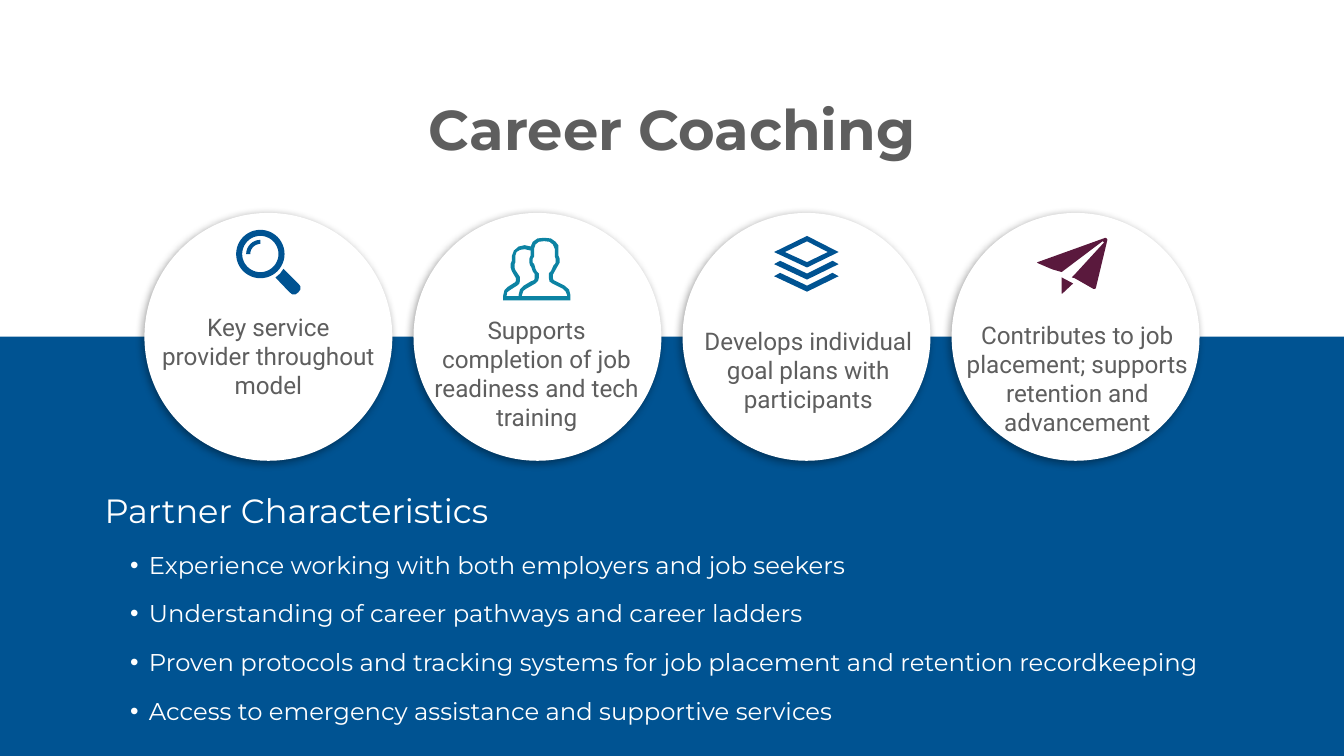
from dataclasses import dataclass
from math import cos, radians, sin

from lxml import etree
from pptx import Presentation
from pptx.dml.color import RGBColor
from pptx.enum.shapes import MSO_SHAPE
from pptx.enum.text import MSO_ANCHOR, MSO_AUTO_SIZE, PP_ALIGN
from pptx.oxml.ns import qn
from pptx.util import Cm, Pt

CENTER, LEFT = PP_ALIGN.CENTER, PP_ALIGN.LEFT
TOP, MIDDLE = MSO_ANCHOR.TOP, MSO_ANCHOR.MIDDLE
NO_AUTOFIT = MSO_AUTO_SIZE.NONE
RECTANGLE, OVAL = MSO_SHAPE.RECTANGLE, MSO_SHAPE.OVAL

SLIDE_WIDTH, SLIDE_HEIGHT = 50.8, 28.58
BAND_TOP = 12.73
CIRCLE_SIZE, CIRCLE_PITCH, CIRCLE_TOP = 9.37, 10.17, 8.05
ICON_UNITS_PER_CM = 39.37


@dataclass(frozen=True)
class Theme:
    white: str = "FFFFFF"
    blue: str = "005392"
    teal: str = "0C83A3"
    plum: str = "5A193D"
    gray: str = "5E5E5E"
    shadow: str = "000000"
    heading_font: str = "Montserrat"
    text_font: str = "Roboto"
    title_size: int = 60
    subtitle_size: int = 36
    text_size: int = 26


def arc(center, radius, start=0, end=360, steps=48):
    """Points along an arc, with angles in degrees clockwise from the right."""
    angles = [radians(start + (end - start) * i / steps) for i in range(steps + 1)]
    return [(center[0] + radius * cos(a), center[1] + radius * sin(a)) for a in angles]


def magnifier():
    center = (35.5, 36)
    handle = [(92, 80), (70, 58), (65, 65), (58, 71), (79, 93), (83, 96),
              (88, 96), (92, 93), (95, 89), (95, 84)]
    glint = arc(center, 21, 180, 270) + arc(center, 15, 270, 180)
    return [arc(center, 36), arc(center, 27), glint, handle]


def people():
    outline = [
        (91, 71), (75, 63), (74, 60), (74, 55), (75, 53), (80, 44), (84, 37),
        (84, 31), (82, 26), (82, 11), (78, 6), (71, 1), (61, 0), (51, 1),
        (44, 6), (41, 13), (32, 11), (23, 13), (16, 19), (13, 27), (13, 34),
        (11, 39), (11, 44), (13, 50), (19, 60), (19, 64), (18, 66), (7, 73),
        (2, 78), (0, 86), (0, 93), (100, 93), (100, 85), (98, 77)]
    back_person = [
        (25, 64), (25, 58), (24, 57), (18, 48), (17, 45), (17, 39), (18, 37),
        (18, 27), (20, 21), (25, 18), (32, 17), (41, 19), (41, 26), (39, 31),
        (39, 37), (40, 41), (42, 44), (44, 50), (47, 54), (47, 60), (46, 63),
        (41, 65), (31, 71), (25, 77), (23, 85), (23, 87), (5, 87), (6, 81),
        (10, 78), (21, 71), (24, 68)]
    front_person = [
        (46, 16), (48, 10), (53, 6), (61, 5), (69, 6), (74, 10), (77, 17),
        (77, 28), (78, 31), (78, 37), (77, 39), (75, 41), (71, 50), (68, 53),
        (68, 60), (69, 65), (73, 68), (89, 76), (93, 80), (95, 85), (95, 87),
        (28, 87), (28, 85), (30, 79), (34, 76), (48, 68), (52, 64), (53, 60),
        (53, 53), (50, 50), (48, 46), (47, 42), (46, 39), (44, 37), (44, 31),
        (46, 28)]
    return [outline, back_person, front_person]


def layers():
    chevron = [(87, 37), (96, 42), (49, 65), (0, 42), (9, 37), (49, 56)]
    return [[(96, 24), (49, 0), (0, 24), (49, 47)],
            [(49, 8), (80, 24), (49, 39), (16, 24)],
            chevron,
            [(x, y + 18) for x, y in chevron]]


def paper_plane():
    wings = [(102, 0), (2, 36), (0, 37), (2, 38), (23, 47), (37, 51), (98, 5),
             (100, 7), (56, 55), (52, 59), (56, 60), (84, 76), (87, 76),
             (88, 74), (105, 3), (104, 1)]
    return [wings, [(37, 59), (37, 83), (38, 83), (54, 68)]]


class SlideBuilder:
    def __init__(self, slide, theme):
        self.slide, self.theme = slide, theme

    def paint(self, shape, color):
        shape.shadow.inherit = False
        shape.fill.solid()
        shape.fill.fore_color.rgb = RGBColor.from_string(color)
        shape.line.fill.background()

    def place(self, shape, left, top, width, height):
        shape.left, shape.top = Cm(left), Cm(top)
        shape.width, shape.height = Cm(width), Cm(height)

    def frame(self, shape, anchor, inset_x=0.25, inset_y=0.13):
        frame = shape.text_frame
        frame.word_wrap, frame.auto_size = True, NO_AUTOFIT
        frame.vertical_anchor = anchor
        frame.margin_left = frame.margin_right = Cm(inset_x)
        frame.margin_top = frame.margin_bottom = Cm(inset_y)
        return frame

    def add_text(self, paragraph, text, size, font, color, align=CENTER, bold=False):
        paragraph.alignment = align
        paragraph.space_before = Pt(0)
        run = paragraph.add_run()
        run.text = text
        run.font.name, run.font.size, run.font.bold = font, Pt(size), bold
        run.font.color.rgb = RGBColor.from_string(color)

    def band(self, top):
        """Full-width band down to the slide's foot, behind everything else."""
        shapes = self.slide.shapes
        band = shapes.add_shape(RECTANGLE, 0, Cm(top), Cm(SLIDE_WIDTH),
                                Cm(SLIDE_HEIGHT - top))
        self.paint(band, self.theme.blue)
        shapes.element.insert(2, band.element)

    def title(self, text):
        title = self.slide.shapes.title
        self.place(title, 14.07, 3.76, 22.68, 2.51)
        paragraph = self.frame(title, MIDDLE, 0.38, 0.18).paragraphs[0]
        paragraph.line_spacing = 0.9
        self.add_text(paragraph, text, self.theme.title_size,
                      self.theme.heading_font, self.theme.gray, bold=True)

    def circle(self, left):
        circle = self.slide.shapes.add_shape(
            OVAL, Cm(left), Cm(CIRCLE_TOP), Cm(CIRCLE_SIZE), Cm(CIRCLE_SIZE))
        self.paint(circle, self.theme.white)
        effects = circle.element.spPr.find(qn("a:effectLst"))
        shadow = etree.SubElement(effects, qn("a:outerShdw"), blurRad=str(Pt(9)),
                                  dist=str(Pt(3)), dir="8100000", rotWithShape="0")
        color = etree.SubElement(shadow, qn("a:srgbClr"), val=self.theme.shadow)
        etree.SubElement(color, qn("a:alpha"), val="40000")

    def icon(self, contours, left, top, color):
        """Fill the contours as one outline; inner ones become holes."""
        # Ten steps per unit, as the freeform builder rounds to whole numbers
        scaled = [[(x * 10, y * 10) for x, y in contour] for contour in contours]
        builder = self.slide.shapes.build_freeform(
            *scaled[0][0], scale=Cm(1) / (ICON_UNITS_PER_CM * 10))
        for number, contour in enumerate(scaled):
            if number:
                builder.move_to(*contour[0])
            builder.add_line_segments(contour[1:], close=True)
        self.paint(builder.convert_to_shape(Cm(left), Cm(top)), color)

    def caption(self, text, left, top, width, height):
        box = self.slide.shapes.add_textbox(Cm(left), Cm(top), Cm(width), Cm(height))
        self.add_text(self.frame(box, TOP).paragraphs[0], text, self.theme.text_size,
                      self.theme.text_font, self.theme.gray)

    def partner_list(self, heading, items):
        body = self.slide.placeholders[1]
        self.place(body, 1.8, 18.57, 47.42, 9.45)
        frame = self.frame(body, TOP)
        for number, text in enumerate([heading, *items]):
            paragraph = frame.add_paragraph() if number else frame.paragraphs[0]
            paragraph.level = 2 if number else 1
            properties = paragraph._p.get_or_add_pPr()
            properties.set("marL", str(Cm(3.58 if number else 1.9)))
            properties.set("indent", str(Cm(-0.71 if number else 0)))
            if number:
                etree.SubElement(properties, qn("a:buFont"), typeface="Arial")
                etree.SubElement(properties, qn("a:buChar"), char="•")
            else:
                etree.SubElement(properties, qn("a:buNone"))
            paragraph.line_spacing, paragraph.space_after = 0.9, Pt(24)
            size = self.theme.text_size if number else self.theme.subtitle_size
            self.add_text(paragraph, text, size, self.theme.heading_font,
                          self.theme.white, align=LEFT)


def main():
    presentation = Presentation()
    presentation.slide_width, presentation.slide_height = Cm(SLIDE_WIDTH), Cm(SLIDE_HEIGHT)
    theme = Theme()
    slide = presentation.slides.add_slide(presentation.slide_layouts[1])
    builder = SlideBuilder(slide, theme)

    builder.band(BAND_TOP)
    builder.title("Career Coaching")
    # Icon, its place and colour; caption and its box
    roles = [
        (magnifier(), (8.94, 8.69), theme.blue,
         "Key service provider throughout model", (5.84, 11.68, 8.61, 3.58)),
        (people(), (19.02, 8.99), theme.teal,
         "Supports completion of job readiness and tech training",
         (15.88, 11.79, 8.81, 4.7)),
        (layers(), (29.26, 8.92), theme.blue,
         "Develops individual goal plans with participants",
         (25.88, 12.19, 9.35, 3.58)),
        (paper_plane(), (39.19, 8.99), theme.plum,
         "Contributes to job placement; supports retention and advancement",
         (36.04, 11.96, 9.37, 4.7)),
    ]
    row_width = CIRCLE_PITCH * (len(roles) - 1) + CIRCLE_SIZE
    first_left = (SLIDE_WIDTH - row_width) / 2
    for column, (contours, icon_place, color, text, box) in enumerate(roles):
        builder.circle(first_left + column * CIRCLE_PITCH)
        builder.icon(contours, *icon_place, color)
        builder.caption(text, *box)

    builder.partner_list("Partner Characteristics", [
        "Experience working with both employers and job seekers",
        "Understanding of career pathways and career ladders",
        "Proven protocols and tracking systems for job placement and retention recordkeeping",
        "Access to emergency assistance and supportive services",
    ])
    presentation.save("out.pptx")


if __name__ == "__main__":
    main()
